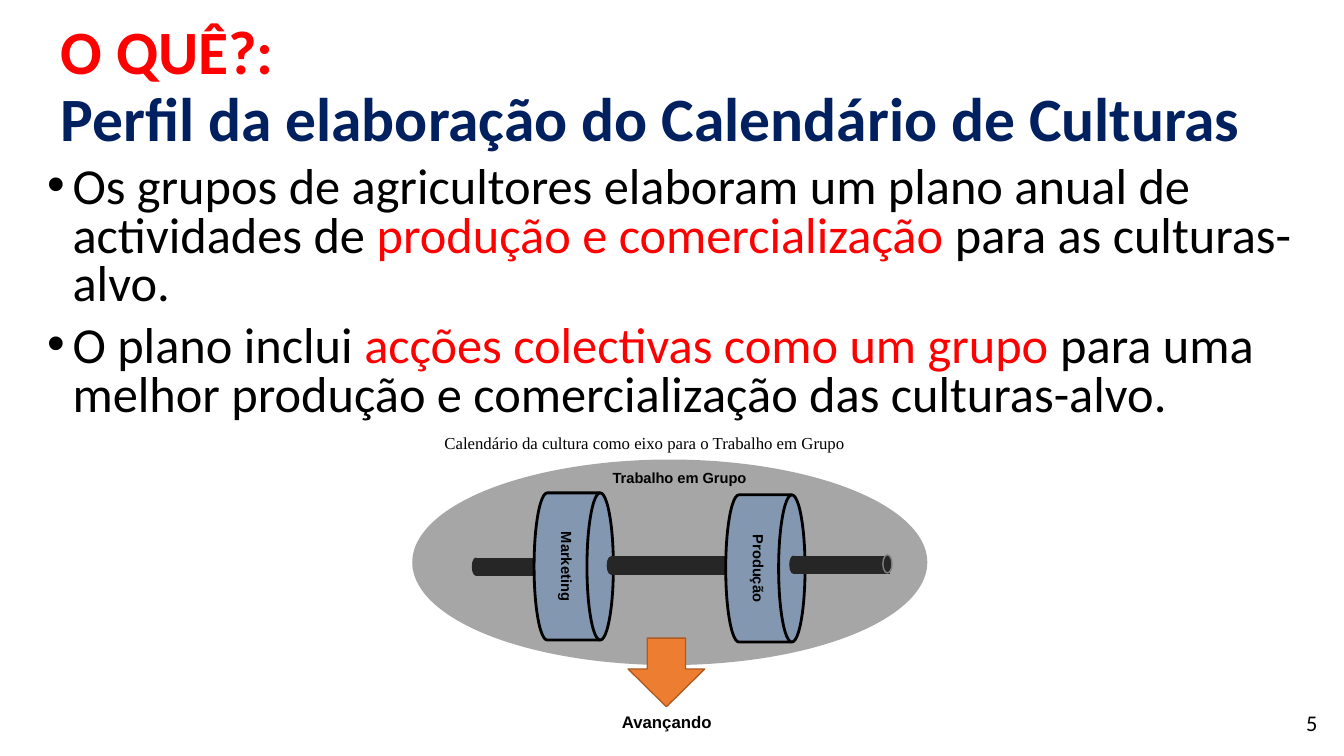
from lxml.etree import SubElement
from pptx import Presentation
from pptx.dml.color import RGBColor
from pptx.enum.shapes import MSO_SHAPE as Shape
from pptx.enum.text import MSO_ANCHOR as Anchor, PP_ALIGN as Align
from pptx.oxml.ns import qn
from pptx.util import Cm, Pt

BLACK = RGBColor(0x00, 0x00, 0x00)
RED = RGBColor(0xFF, 0x00, 0x00)
NAVY = RGBColor(0x00, 0x20, 0x60)
GRAY = RGBColor(0xA6, 0xA6, 0xA6)
RIM_GRAY = RGBColor(0x80, 0x80, 0x80)
CHARCOAL = RGBColor(0x26, 0x26, 0x26)
STEEL = RGBColor(0x84, 0x97, 0xB0)
ORANGE = RGBColor(0xED, 0x7D, 0x31)
RUST = RGBColor(0xAF, 0x5C, 0x24)

BULLETS = [
    [("Os grupos de agricultores elaboram um plano anual de actividades de ", BLACK),
     ("produção e comercialização ", RED),
     ("para as culturas-alvo.", BLACK)],
    [("O plano inclui ", BLACK),
     ("acções colectivas como um grupo ", RED),
     ("para uma melhor produção e comercialização das culturas-alvo.", BLACK)],
]


def set_font(para, name, size, bold=False, color=None):
    """Format a whole paragraph."""
    para.font.name, para.font.size, para.font.bold = name, Pt(size), bold
    if color is not None:
        para.font.color.rgb = color


def add_span(para, text, color):
    """Append a coloured run."""
    span = para.add_run()
    span.text = text
    span.font.color.rgb = color


def add_label(shapes, box, text, name, size, bold=False, align=Align.LEFT, anchor=Anchor.TOP):
    """Add a one-paragraph text box and return its frame."""
    frame = shapes.add_textbox(*map(Cm, box)).text_frame
    frame.word_wrap = True
    frame.vertical_anchor = anchor
    para = frame.paragraphs[0]
    para.text, para.alignment = text, align
    set_font(para, name, size, bold, BLACK)
    return frame


def add_part(shapes, kind, box, fill, line=None, width=1):
    """Add a filled preset shape, outlined only if a line colour is given."""
    part = shapes.add_shape(kind, *map(Cm, box))
    part.shadow.inherit = False
    part.fill.solid()
    part.fill.fore_color.rgb = fill
    if line is None:
        part.line.fill.background()
    else:
        part.line.color.rgb, part.line.width = line, Pt(width)
    return part


def add_title(page, box):
    """Fill the title placeholder with its two coloured lines."""
    title = page.shapes.title
    title.left, title.top, title.width, title.height = map(Cm, box)
    frame = title.text_frame
    frame.word_wrap = True
    frame.vertical_anchor = Anchor.MIDDLE
    para = frame.paragraphs[0]
    para.alignment, para.line_spacing = Align.LEFT, 0.9
    set_font(para, "Calibri", 44, True)
    add_span(para, "O QUÊ?: ", RED)
    para.add_line_break()
    add_span(para, "Perfil da elaboração do Calendário de Culturas", NAVY)


def add_bullets(page, box):
    """Add the bulleted body text."""
    frame = page.shapes.add_textbox(*map(Cm, box)).text_frame
    frame.word_wrap = True
    for index, spans in enumerate(BULLETS):
        para = frame.add_paragraph() if index else frame.paragraphs[0]
        para.line_spacing, para.space_before = 0.8, Pt(10)
        set_font(para, "Calibri", 36)
        properties = para._p.get_or_add_pPr()
        properties.set("marL", str(Cm(0.64)))
        properties.set("indent", str(Cm(-0.64)))
        bullet_font = properties.makeelement(qn("a:buFont"), {"typeface": "Arial"})
        properties.find(qn("a:defRPr")).addprevious(bullet_font)
        bullet = properties.makeelement(qn("a:buChar"), {"char": "•"})
        bullet_font.addnext(bullet)
        for text, color in spans:
            add_span(para, text, color)


def add_rod(shapes, left, top, width):
    """Add an axle section with its rounded left end."""
    add_part(shapes, Shape.FLOWCHART_PROCESS, (left, top, width, 0.46), CHARCOAL)
    add_part(shapes, Shape.OVAL, (left - 0.1, top, 0.2, 0.46), CHARCOAL)


def add_drum(shapes, left, top, text):
    """Add a wheel with its name running downwards."""
    drum = add_part(shapes, Shape.FLOWCHART_DIRECT_ACCESS_STORAGE,
                    (left, top, 2, 3.71), STEEL, BLACK, 2)
    frame = drum.text_frame
    frame.margin_left = frame.margin_right = frame.margin_top = frame.margin_bottom = Cm(0.1)
    frame.vertical_anchor = Anchor.MIDDLE
    frame._txBody.bodyPr.set("vert", "vert")
    para = frame.paragraphs[0]
    para.text, para.alignment = text, Align.CENTER
    set_font(para, "Arial", 10.5, True, BLACK)


def add_axle_diagram(page, box):
    """Draw the two wheels on their axle inside the group-work ellipse."""
    left, top, width, height = box
    shapes = page.shapes.add_group_shape().shapes
    add_part(shapes, Shape.OVAL, (left, top + 0.81, width, 5.18), GRAY)
    arrow = add_part(shapes, Shape.DOWN_ARROW, (left + 5.44, top + 5.31, 1.93, 1.73),
                     ORANGE, RUST)
    arrow.adjustments[0], arrow.adjustments[1] = 0.5, 0.55
    add_rod(shapes, left + 1.6, top + 3.28, 1.6)
    add_drum(shapes, left + 3.07, top + 1.65, "Marketing")
    add_rod(shapes, left + 5, top + 3.25, 2.87)
    add_drum(shapes, left + 7.9, top + 1.7, "Produção")
    add_rod(shapes, left + 9.6, top + 3.23, 2.44)
    add_part(shapes, Shape.OVAL, (left + 11.86, top + 3.21, 0.23, 0.46), CHARCOAL, RIM_GRAY)
    result = add_label(shapes, (left + 4.37, top + height - 0.74, 4.09, 0.74), "Avançando",
                       "Arial", 12, True, Align.CENTER, Anchor.BOTTOM)
    result.margin_top = result.margin_bottom = 0
    add_label(shapes, (left + 0.56, top, 12.6, 2),
              "Calendário da cultura como eixo para o Trabalho em Grupo", "Times New Roman", 12)
    add_label(shapes, (left + 4.8, top + 0.91, 5.59, 0.91), "Trabalho em Grupo",
              "Arial", 10.5, True, Align.JUSTIFY)


def main():
    """Build the slide and save it."""
    deck = Presentation()
    deck.slide_width, deck.slide_height = Cm(33.87), Cm(19.05)
    page = deck.slides.add_slide(deck.slide_layouts[5])
    add_title(page, (1.27, 0.38, 31.55, 3.68))
    add_bullets(page, (0.94, 4.06, 31.88, 7.44))
    add_label(page.shapes, (25.83, 17.7, 7.62, 1.02), "5", "Calibri", 16,
              align=Align.RIGHT, anchor=Anchor.MIDDLE)
    add_axle_diagram(page, (10.39, 10.77, 12.98, 7.67))
    deck.save("out.pptx")


if __name__ == "__main__":
    main()
